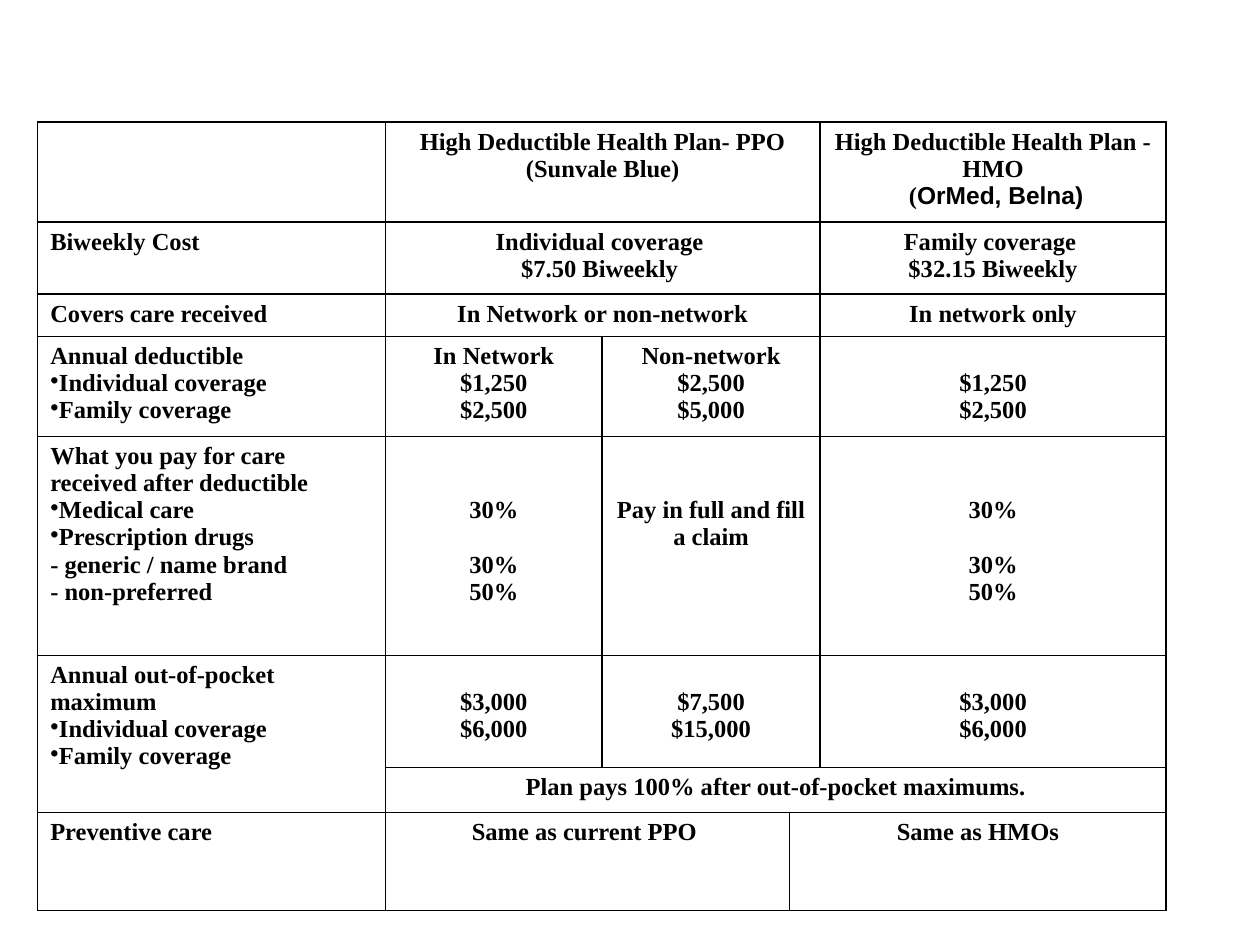
import lxml.etree
import pptx
import pptx.dml.color
import pptx.enum.text
import pptx.oxml.ns
import pptx.util

SERIF = "Times New Roman"
SANS = "Arial"
BLACK = "000000"
TEXT_SIZE = 14
LINE_HEIGHT = 15.5
CELL_MARGIN = 3.6
COLUMN_WIDTHS = [7.01, 4.37, 3.78, 0.61, 6.98]
ROW_HEIGHTS = [2.02, 1.45, 0.85, 2.02, 4.41, 2.26, 0.91, 1.98]

COVERAGE = ["•Individual coverage", "•Family coverage"]
CARE_SHARES = ["", "", "30%", "", "30%", "50%"]
LOW_DEDUCTIBLE = ["$1,250", "$2,500"]
LOW_MAXIMUM = ["", "$3,000", "$6,000"]

# row, column, rows spanned, columns spanned, lines
PLAN_CELLS = [
    (0, 1, 1, 3, ["High Deductible Health Plan- PPO", "(Sunvale Blue)"]),
    (0, 4, 1, 1, ["High Deductible Health Plan - HMO",
                  [(" (", SERIF), ("OrMed, Belna)", SANS)]]),
    (1, 0, 1, 1, ["Biweekly Cost"]),
    (1, 1, 1, 3, ["Individual coverage ", "$7.50 Biweekly "]),
    (1, 4, 1, 1, ["Family coverage ", "$32.15 Biweekly"]),
    (2, 0, 1, 1, ["Covers care received"]),
    (2, 1, 1, 3, ["In Network or non-network"]),
    (2, 4, 1, 1, ["In network only"]),
    (3, 0, 1, 1, ["Annual deductible"] + COVERAGE),
    (3, 1, 1, 1, ["In Network"] + LOW_DEDUCTIBLE),
    (3, 2, 1, 2, ["Non-network", "$2,500", "$5,000"]),
    (3, 4, 1, 1, [""] + LOW_DEDUCTIBLE),
    (4, 0, 1, 1, ["What you pay for care received after deductible",
                  "•Medical care", "•Prescription drugs",
                  "- generic / name brand", "- non-preferred"]),
    (4, 1, 1, 1, CARE_SHARES),
    (4, 2, 1, 2, ["", "", "Pay in full and fill a claim"]),
    (4, 4, 1, 1, CARE_SHARES),
    (5, 0, 2, 1, ["Annual out-of-pocket maximum"] + COVERAGE),
    (5, 1, 1, 1, LOW_MAXIMUM),
    (5, 2, 1, 2, ["", "$7,500", "$15,000"]),
    (5, 4, 1, 1, LOW_MAXIMUM),
    (6, 1, 1, 4, ["Plan pays 100% after out-of-pocket maximums."]),
    (7, 0, 1, 1, ["Preventive care"]),
    (7, 1, 1, 2, ["Same as current PPO "]),
    (7, 3, 1, 2, ["Same as HMOs"]),
]


def color(value):
    return pptx.dml.color.RGBColor.from_string(value)


def add_child(parent, tag, **attributes):
    return lxml.etree.SubElement(parent, pptx.oxml.ns.qn(tag), attributes)


def add_borders(cell):
    properties = cell._tc.get_or_add_tcPr()
    width = str(int(pptx.util.Pt(1)))
    for position, side in enumerate(("a:lnL", "a:lnR", "a:lnT", "a:lnB")):
        line = add_child(properties, side, w=width)
        add_child(add_child(line, "a:solidFill"), "a:srgbClr", val=BLACK)
        properties.insert(position, line)


def add_span(para, text, font_name):
    span = para.add_run()
    span.text = text
    span.font.name = font_name
    span.font.size = pptx.util.Pt(TEXT_SIZE)
    span.font.bold = True
    span.font.color.rgb = color(BLACK)


def fill_line(para, line):
    if isinstance(line, str):
        if line.startswith("•"):
            add_child(para._p.get_or_add_pPr(), "a:buChar", char="•")
            line = line[1:]
        line = [(line, SERIF)]
    for text, font_name in line:
        add_span(para, text, font_name)


def fill_cell(cell, lines, centered):
    frame = cell.text_frame
    gap = 0
    started = False
    for line in lines:
        if not line:
            gap += LINE_HEIGHT
            continue
        para = frame.add_paragraph() if started else frame.paragraphs[0]
        if centered:
            para.alignment = pptx.enum.text.PP_ALIGN.CENTER
        if gap and started:
            para.space_before = pptx.util.Pt(gap)
        elif gap:
            cell.margin_top = pptx.util.Pt(CELL_MARGIN + gap)
        fill_line(para, line)
        gap = 0
        started = True


def add_plan_table(page):
    box = page.shapes.add_table(
        len(ROW_HEIGHTS), len(COLUMN_WIDTHS),
        pptx.util.Cm(0.76), pptx.util.Cm(2.46),
        pptx.util.Cm(sum(COLUMN_WIDTHS)), pptx.util.Cm(sum(ROW_HEIGHTS)))
    table = box.table
    table.first_row = False
    table.horz_banding = False
    for column, width in zip(table.columns, COLUMN_WIDTHS):
        column.width = pptx.util.Cm(width)
    for row, height in zip(table.rows, ROW_HEIGHTS):
        row.height = pptx.util.Cm(height)
    for row, column, rows, columns, lines in PLAN_CELLS:
        cell = table.cell(row, column)
        if rows * columns > 1:
            cell.merge(table.cell(row + rows - 1, column + columns - 1))
        fill_cell(cell, lines, column > 0)
    for cell in table.iter_cells():
        cell.fill.background()
        add_borders(cell)
        if cell.is_spanned:
            cell.margin_top = cell.margin_bottom = 0


def main():
    deck = pptx.Presentation()
    deck.slide_width = pptx.util.Cm(25.4)
    deck.slide_height = pptx.util.Cm(19.05)
    page = deck.slides.add_slide(deck.slide_layouts[6])
    add_plan_table(page)
    deck.save("out.pptx")


if __name__ == "__main__":
    main()
